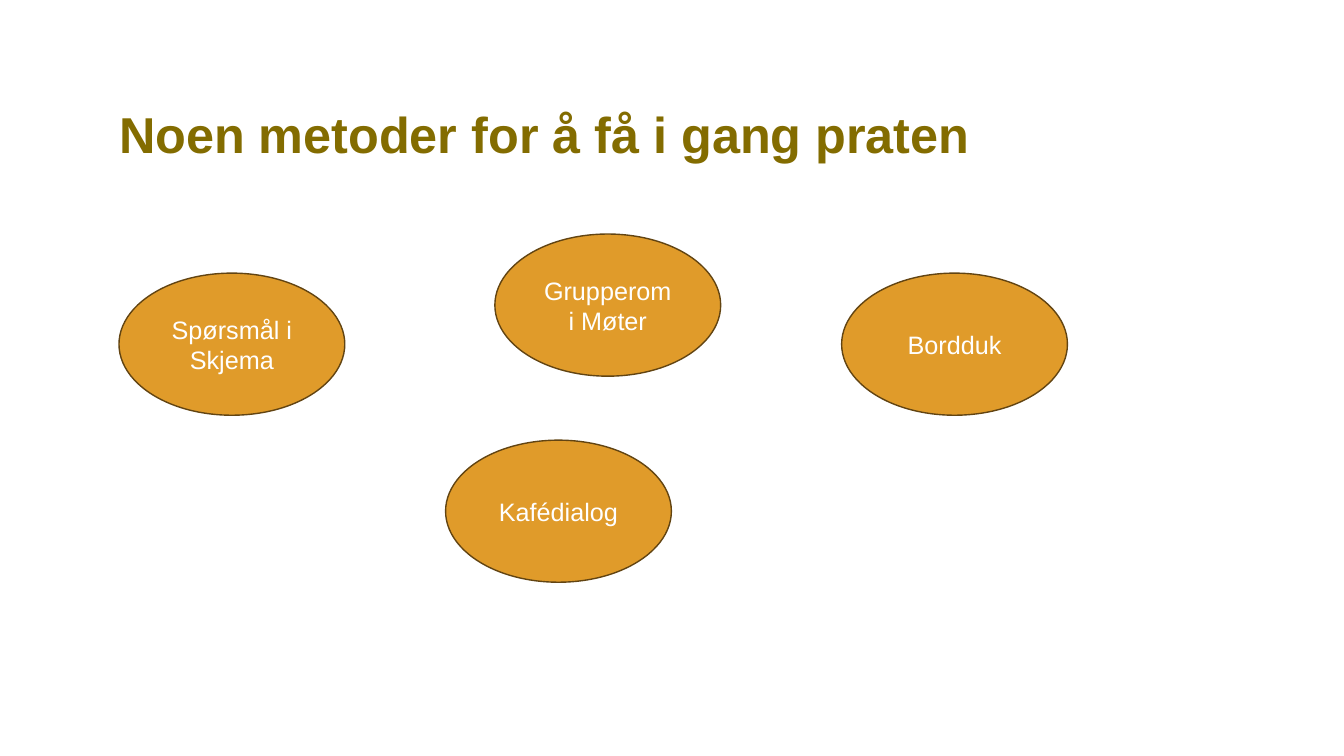
from pptx import Presentation
from pptx.dml.color import RGBColor
from pptx.enum.shapes import MSO_SHAPE
from pptx.enum.text import MSO_ANCHOR, MSO_AUTO_SIZE, PP_ALIGN
from pptx.util import Pt

ELLIPSE = MSO_SHAPE.OVAL
MIDDLE = MSO_ANCHOR.MIDDLE
NO_AUTOFIT = MSO_AUTO_SIZE.NONE
LEFT, CENTER = PP_ALIGN.LEFT, PP_ALIGN.CENTER
TITLE_ONLY = 5

COLORS = {
    "title": "836C00",
    "ellipse": "E09B2A",
    "outline": "624412",
    "label": "FFFFFF",
}
FONTS = {
    "title": {"name": "Arial", "size": Pt(36), "bold": True},
    "label": {"name": "Arial", "size": Pt(18), "bold": False},
}
FRAMES = {
    "title": {"margin_left": 0, "margin_top": 0, "margin_right": 0, "margin_bottom": 0},
    "label": {},
}
PARAGRAPHS = {
    "title": {"alignment": LEFT, "line_spacing": 0.9},
    "label": {"alignment": CENTER},
}

LEFT_EDGE = 85
OUTER_TOP = 195.1
ELLIPSE_SIZE = (161.3, 101.5)
METHODS = [
    ("Spørsmål i Skjema", LEFT_EDGE, OUTER_TOP),
    ("Grupperom i Møter", 353.5, 167.2),
    ("Kafédialog", 318.3, 314.4),
    ("Bordduk", 601.2, OUTER_TOP),
]


def set_attributes(target, values):
    for name, value in values.items():
        setattr(target, name, value)


class SlideBuilder:
    def __init__(self, slide):
        self.slide = slide

    def color(self, name):
        return RGBColor.from_string(COLORS[name])

    def fill_text(self, shape, text, style):
        frame = shape.text_frame
        frame.text = text
        set_attributes(frame, {"word_wrap": True, "auto_size": NO_AUTOFIT,
                               "vertical_anchor": MIDDLE, **FRAMES[style]})
        paragraph = frame.paragraphs[0]
        set_attributes(paragraph, PARAGRAPHS[style])
        font = paragraph.runs[0].font
        set_attributes(font, FONTS[style])
        font.color.rgb = self.color(style)

    def add_title(self, text, left, top, width, height):
        title = self.slide.shapes.title
        set_attributes(title, {"left": Pt(left), "top": Pt(top),
                               "width": Pt(width), "height": Pt(height)})
        self.fill_text(title, text, "title")

    def add_ellipse(self, text, left, top):
        width, height = ELLIPSE_SIZE
        shape = self.slide.shapes.add_shape(
            ELLIPSE, Pt(left), Pt(top), Pt(width), Pt(height))
        shape.shadow.inherit = False
        shape.fill.solid()
        shape.fill.fore_color.rgb = self.color("ellipse")
        shape.line.color.rgb = self.color("outline")
        shape.line.width = Pt(1)
        self.fill_text(shape, text, "label")


def main():
    presentation = Presentation()
    presentation.slide_width, presentation.slide_height = Pt(960), Pt(540)
    slide = presentation.slides.add_slide(presentation.slide_layouts[TITLE_ONLY])
    builder = SlideBuilder(slide)
    builder.add_title("Noen metoder for å få i gang praten", LEFT_EDGE, 38.9, 828, 118.1)
    for text, left, top in METHODS:
        builder.add_ellipse(text, left, top)
    presentation.save("out.pptx")


if __name__ == "__main__":
    main()
